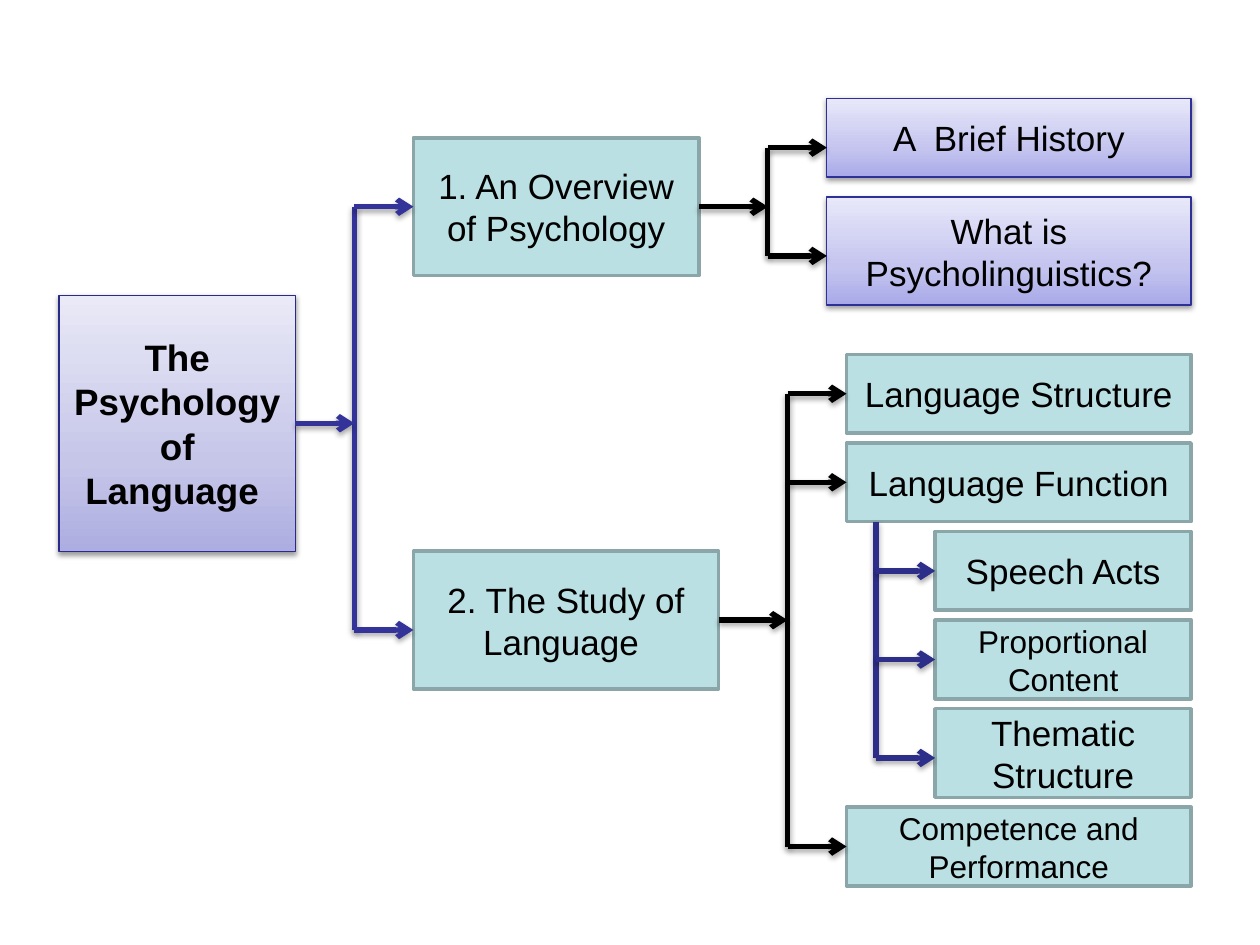
from copy import deepcopy

from lxml.etree import SubElement
from pptx import Presentation
from pptx.dml.color import RGBColor
from pptx.enum.shapes import MSO_CONNECTOR as Connector, MSO_SHAPE as Shape
from pptx.enum.text import MSO_ANCHOR as Anchor, PP_ALIGN as Align
from pptx.oxml.ns import qn
from pptx.util import Inches, Pt

COLUMNS, ROWS = 128, 96
WIDTH, HEIGHT = Inches(10), Inches(7.5)
BLACK = RGBColor(0, 0, 0)
INDIGO = RGBColor(0x33, 0x33, 0x99)
NAVY = RGBColor(0x2D, 0x2D, 0x8A)
TEAL = RGBColor(0xBB, 0xE0, 0xE3)
TEAL_EDGE = RGBColor(0x8A, 0xA6, 0xA8)
ROOT_EDGE = RGBColor(0x2A, 0x2A, 0x89)
TOPIC_EDGE = RGBColor(0x2F, 0x2F, 0x98)
ROOT_SHADES = (RGBColor(0xAD, 0xAD, 0xE1), RGBColor(0xC6, 0xC6, 0xE9), RGBColor(0xE9, 0xE9, 0xF7))
TOPIC_SHADES = (RGBColor(0xA9, 0xA9, 0xE9), RGBColor(0xC4, 0xC4, 0xEF), RGBColor(0xE8, 0xE8, 0xFA))


def across(columns):
    """Turn grid columns into a length."""
    return round(WIDTH * columns / COLUMNS)


def down(rows):
    """Turn grid rows into a length."""
    return round(HEIGHT * rows / ROWS)


def cast_shadow(part, distance, opacity):
    """Give a box or line a soft shadow straight below it."""
    properties = part._element.spPr
    effects = properties.find(qn("a:effectLst"))
    if effects is None:
        effects = SubElement(properties, qn("a:effectLst"))
    shadow = SubElement(effects, qn("a:outerShdw"), blurRad=str(Pt(3.15)),
                        dist=str(Pt(distance)), dir="5400000", rotWithShape="0")
    shade = SubElement(shadow, qn("a:srgbClr"), val=str(BLACK))
    SubElement(shade, qn("a:alpha"), val=str(opacity * 1000))


def shade_upward(box, shades):
    """Fill a box with a three-stop gradient from bottom to top."""
    box.fill.gradient()
    box.fill.gradient_angle = 90
    stop_list = box._element.spPr.find(".//" + qn("a:gsLst"))
    stop_list.insert(1, deepcopy(stop_list[0]))
    for stop, position, shade in zip(box.fill.gradient_stops, (0, 0.35, 1), shades):
        stop.position = position
        stop.color.rgb = shade


def write(box, text, size=20, bold=False):
    """Write centred text in a box."""
    frame = box.text_frame
    frame.word_wrap = True
    frame.vertical_anchor = Anchor.MIDDLE
    paragraph = frame.paragraphs[0]
    paragraph.alignment = Align.CENTER
    run = paragraph.add_run()
    run.text = text
    run.font.name = "Arial"
    run.font.size = Pt(size)
    run.font.bold = bold
    run.font.color.rgb = BLACK


def add_box(slide, text, column, row, columns, rows=8, shades=None, edge=TEAL_EDGE, **text_format):
    """Add a labelled box, shaded with a shadow or plain teal."""
    box = slide.shapes.add_shape(Shape.RECTANGLE, across(column), down(row),
                                 across(columns), down(rows))
    box.shadow.inherit = False
    box.line.color.rgb = edge
    if shades:
        box.line.width = Pt(0.75)
        shade_upward(box, shades)
        cast_shadow(box, 1.57, 38)
    else:
        box.line.width = Pt(2)
        box.fill.solid()
        box.fill.fore_color.rgb = TEAL
    write(box, text, **text_format)
    return box


def add_line(slide, start, end, color, arrow=True):
    """Add a straight line between two grid points."""
    line = slide.shapes.add_connector(Connector.STRAIGHT, across(start[0]), down(start[1]),
                                      across(end[0]), down(end[1]))
    line.line.color.rgb = color
    line.line.width = Pt(3)
    if arrow:
        SubElement(line.line._get_or_add_ln(), qn("a:tailEnd"), type="arrow")
    cast_shadow(line, 1.81, 35)
    return line


def is_middle(box, row):
    """Tell whether a row meets the middle of a box's side."""
    return abs(box.top + box.height / 2 - down(row)) < down(0.1)


def add_trunk(slide, column, top, branches, color):
    """Add a vertical trunk with an arrow to each (row, box) branch."""
    add_line(slide, (column, top), (column, branches[-1][0]), color, arrow=False)
    for row, box in branches:
        branch = add_line(slide, (column, row), (box.left / across(1), row), color)
        if is_middle(box, row):
            branch.end_connect(box, 1)


def add_stem(slide, box, column, color):
    """Add an arrow from the right side of a box to a trunk."""
    row = (box.top + box.height / 2) / down(1)
    stem = add_line(slide, ((box.left + box.width) / across(1), row), (column, row), color)
    stem.begin_connect(box, 3)


def main():
    """Build the outline tree slide."""
    deck = Presentation()
    deck.slide_width, deck.slide_height = WIDTH, HEIGHT
    slide = deck.slides.add_slide(deck.slide_layouts[6])

    root = add_box(slide, "The Psychology of Language ", 6, 30, 24, 26,
                   shades=ROOT_SHADES, edge=ROOT_EDGE, size=21, bold=True)
    overview = add_box(slide, "1. An Overview of Psychology", 42, 14, 29, 14)
    study = add_box(slide, "2. The Study of Language ", 42, 56, 31, 14)
    history, definition = [
        add_box(slide, text, 84, row, 37, rows, shades=TOPIC_SHADES, edge=TOPIC_EDGE)
        for text, row, rows in (("A  Brief History", 10, 8),
                                ("What is Psycholinguistics?", 20, 11))]
    structure, function, competence = [
        add_box(slide, text, 86, row, 35, size=size)
        for text, row, size in (("Language Structure", 36, 20),
                                ("Language Function", 45, 20),
                                ("Competence and Performance", 82, 18))]
    speech, proportional, thematic = [
        add_box(slide, text, 95, row, 26, rows, size=size)
        for text, row, rows, size in (("Speech Acts", 54, 8, 20),
                                      ("Proportional Content", 63, 8, 18),
                                      ("Thematic Structure", 72, 9, 20))]

    add_trunk(slide, 36, 21, [(21, overview), (64, study)], INDIGO)
    add_trunk(slide, 78, 15, [(15, history), (26, definition)], BLACK)
    add_trunk(slide, 80, 40, [(40, structure), (49, function), (86, competence)], BLACK)
    add_trunk(slide, 89, 53, [(58, speech), (67, proportional), (77, thematic)], NAVY)
    for box, column, color in ((root, 36, INDIGO), (overview, 78, BLACK), (study, 80, BLACK)):
        add_stem(slide, box, column, color)

    deck.save("out.pptx")


if __name__ == "__main__":
    main()
